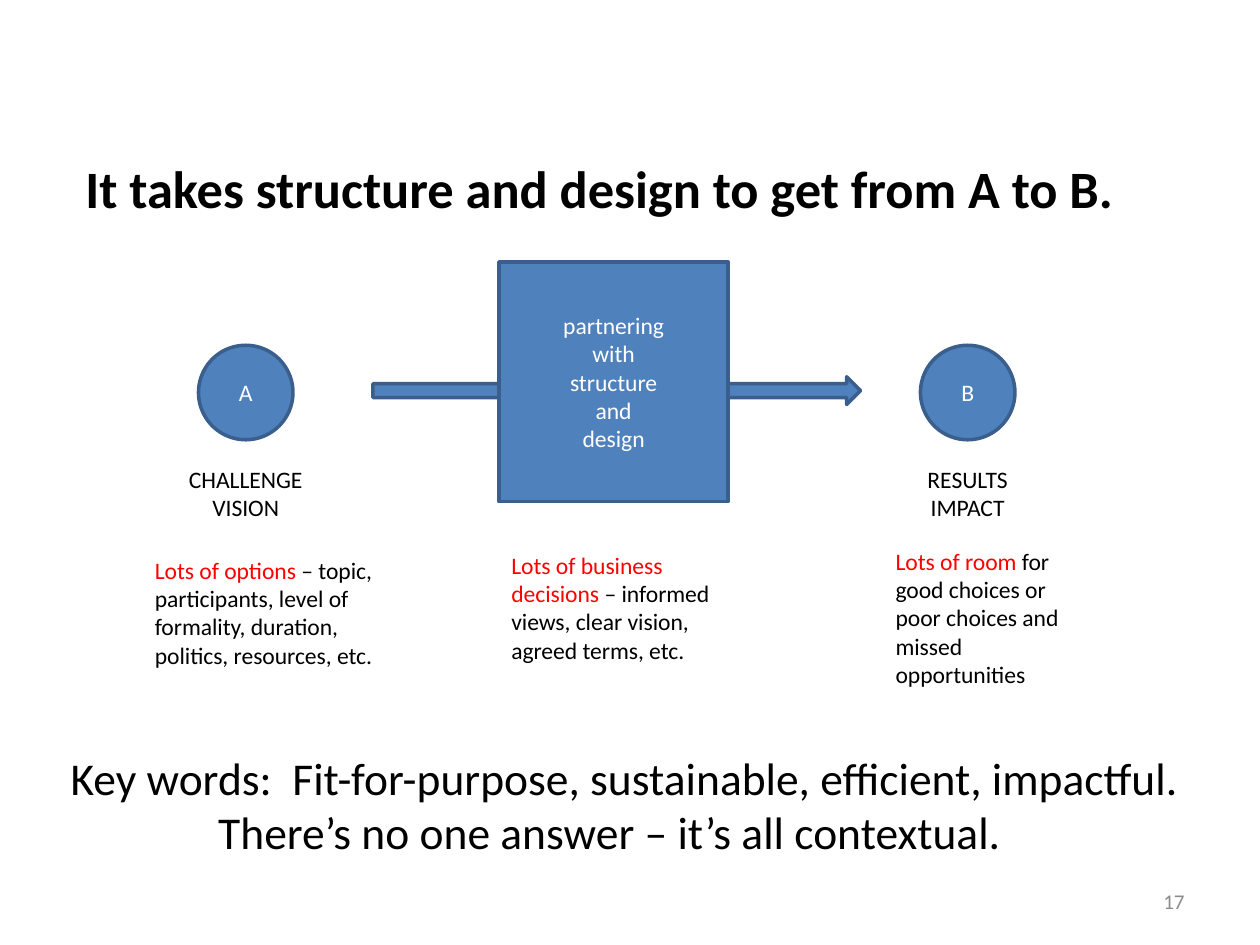
from dataclasses import dataclass

from pptx import Presentation
from pptx.dml.color import RGBColor
from pptx.enum.shapes import MSO_SHAPE as Preset
from pptx.enum.text import MSO_ANCHOR as Anchor, PP_ALIGN as Align
from pptx.slide import Slide
from pptx.util import Inches, Pt

BLUE = RGBColor(0x4F, 0x81, 0xBD)
OUTLINE = RGBColor(0x3A, 0x5F, 0x8C)
BLACK = RGBColor(0, 0, 0)
WHITE = RGBColor(0xFF, 0xFF, 0xFF)
RED = RGBColor(0xFF, 0, 0)
GREY = RGBColor(0x8C, 0x8C, 0x8C)


@dataclass
class Canvas:
    """Draws styled elements on the current slide."""

    slide: Slide
    font: str = "Calibri"
    size: float = 13.5

    def fill_lines(self, frame, lines, color, size, align, bold=False):
        frame.word_wrap = True
        for index, line in enumerate(lines):
            paragraph = frame.paragraphs[0] if index == 0 else frame.add_paragraph()
            paragraph.alignment = align
            paragraph.font.name = self.font
            paragraph.font.size = Pt(size)
            paragraph.font.bold = bold
            paragraph.font.color.rgb = color
            paragraph.add_run().text = line

    def text(self, box, lines, color=BLACK, size=None, align=Align.LEFT, anchor=Anchor.TOP, bold=False):
        frame = self.slide.shapes.add_textbox(*map(Inches, box)).text_frame
        frame.vertical_anchor = anchor
        self.fill_lines(frame, lines, color, size or self.size, align, bold)
        return frame

    def shape(self, preset, box, lines=()):
        shape = self.slide.shapes.add_shape(preset, *map(Inches, box))
        shape.shadow.inherit = False
        shape.fill.solid()
        shape.fill.fore_color.rgb = BLUE
        shape.line.color.rgb = OUTLINE
        shape.line.width = Pt(2)
        shape.text_frame.vertical_anchor = Anchor.MIDDLE
        self.fill_lines(shape.text_frame, lines, WHITE, self.size, Align.CENTER)

    def stage(self, center, letter, labels):
        self.shape(Preset.OVAL, (center - 0.375, 2.74, 0.75, 0.75), [letter])
        self.text((center - 0.67, 3.64, 1.34, 0.56), labels, align=Align.CENTER)

    def remark(self, box, lead, rest):
        paragraph = self.text(box, [lead]).paragraphs[0]
        paragraph.runs[0].font.color.rgb = RED
        paragraph.add_run().text = rest


def main():
    deck = Presentation()
    deck.slide_width, deck.slide_height = Inches(10), Inches(7.5)
    canvas = Canvas(deck.slides.add_slide(deck.slide_layouts[6]))

    canvas.shape(Preset.RIGHT_ARROW, (2.96, 2.99, 3.87, 0.22))
    canvas.text((0.58, 1.2, 8.62, 0.58), ["It takes structure and design to get from A to B."],
                size=30, anchor=Anchor.MIDDLE, bold=True)
    canvas.text((7.17, 6.95, 2.33, 0.4), ["17"], GREY, 12, Align.RIGHT, Anchor.MIDDLE)
    summary = canvas.text((0.46, 5.9, 9.08, 0.98), [
        "Key words:  Fit-for-purpose, sustainable, efficient, impactful. ",
        "There’s no one answer – it’s all contextual.",
    ], size=26, align=Align.CENTER)
    closing = summary.paragraphs[1]
    closing._p.get_or_add_pPr().set("marR", str(Inches(0.32)))

    canvas.stage(1.95, "A", ["CHALLENGE", "VISION"])
    canvas.stage(7.68, "B", ["RESULTS", "IMPACT"])

    canvas.remark((1.13, 4.36, 1.99, 1.24), "Lots of options ",
                  "– topic, participants, level of formality, duration, politics, resources, etc.")
    canvas.remark((3.96, 4.32, 1.87, 1.24), "Lots of business decisions ",
                  "– informed views, clear vision, agreed terms, etc.")
    canvas.remark((7.01, 4.29, 1.76, 1.46), "Lots of room ",
                  "for good choices or poor choices and missed opportunities")

    canvas.shape(Preset.RECTANGLE, (3.96, 2.08, 1.82, 1.9),
                 ["partnering", "with", "structure", "and", "design"])
    deck.save("out.pptx")


if __name__ == "__main__":
    main()
